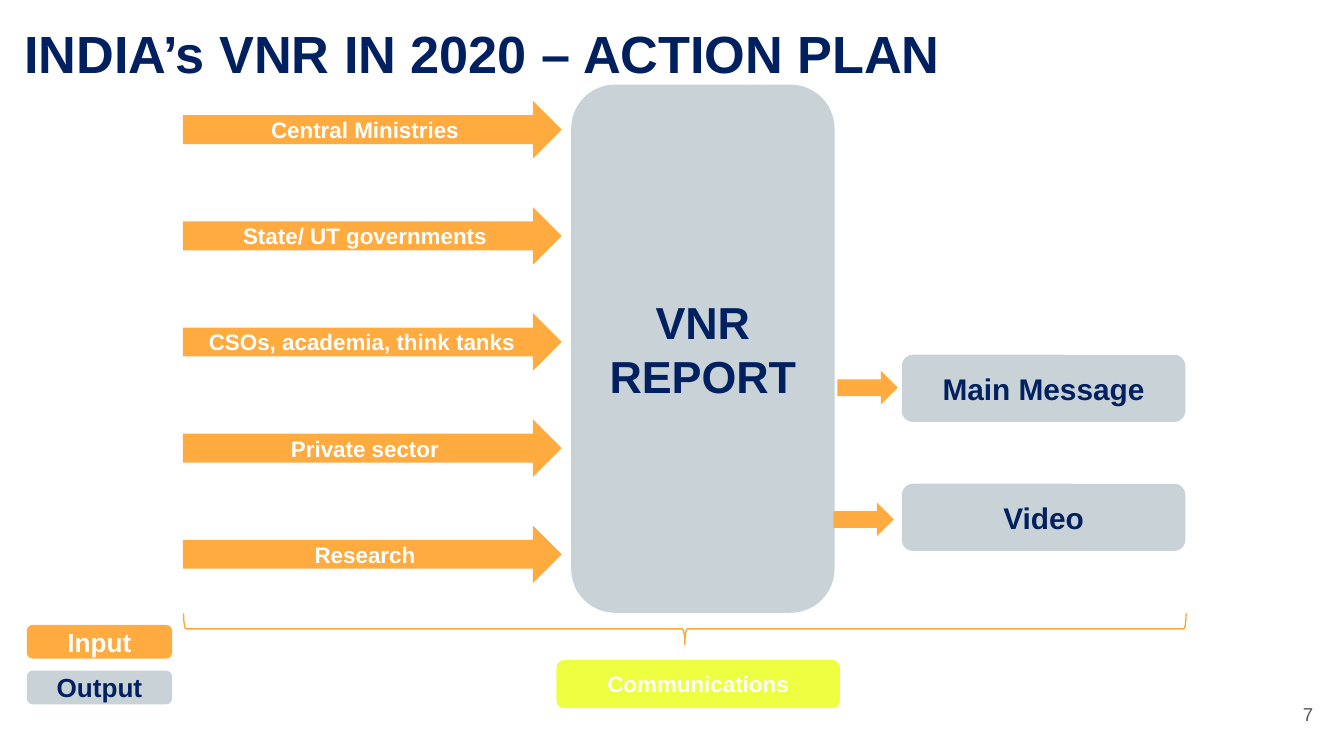
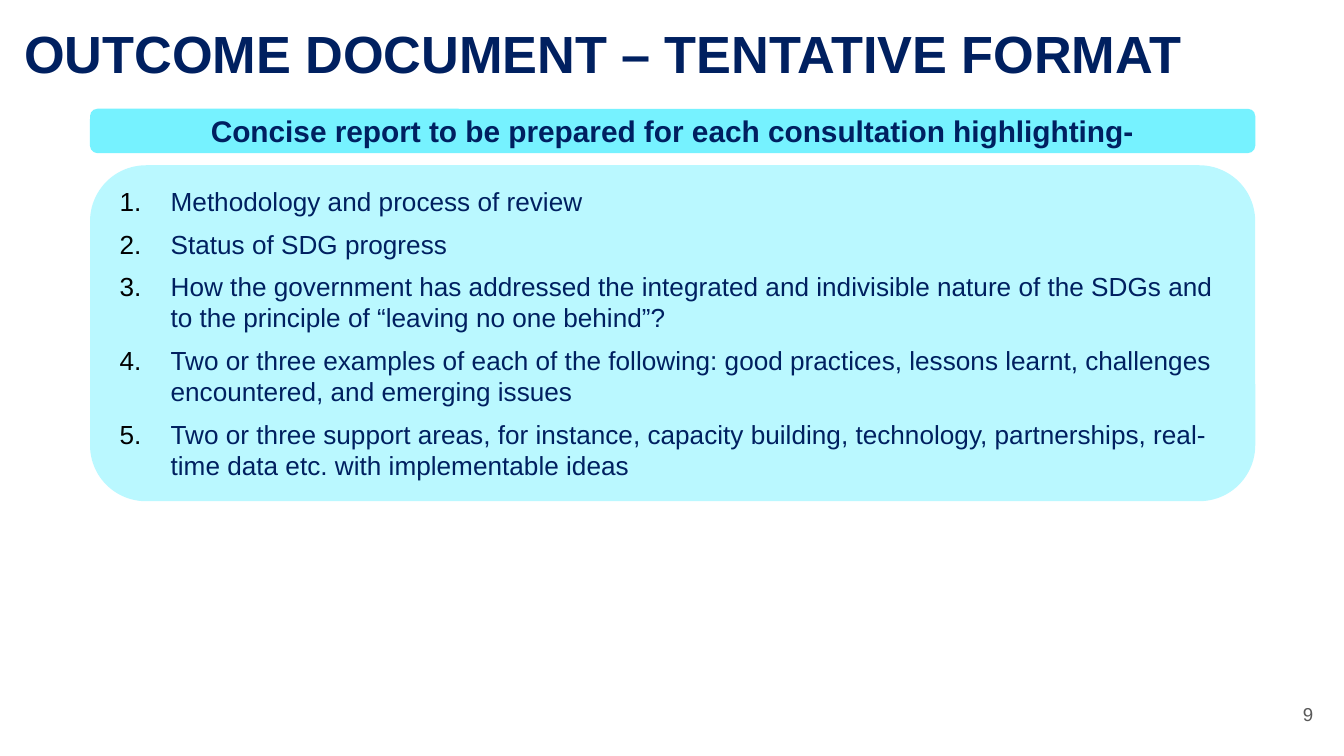
import pptx
import pptx.util
import pptx.dml.color
import pptx.enum.shapes
import pptx.enum.text
import pptx.oxml.ns
from lxml import etree

Inches, Pt = pptx.util.Inches, pptx.util.Pt
KIND = pptx.enum.shapes.MSO_SHAPE
ALIGN = pptx.enum.text.PP_ALIGN
ANCHOR = pptx.enum.text.MSO_ANCHOR
ROUND, ARROW = KIND.ROUNDED_RECTANGLE, KIND.RIGHT_ARROW

FONT = "Arial"
NAVY, WHITE, GREY, BLACK = "002060", "FFFFFF", "595959", "000000"
ORANGE, SILVER, LIME, BRACE = "FFAB40", "C9D3D7", "EEFF41", "FEA83A"
AQUA, PALE = "76F2FF", "BAF8FF"

PLAN = "INDIA’s VNR IN 2020 – ACTION PLAN"
INPUTS = ["Central Ministries", "State/ UT governments",
          "CSOs, academia, think tanks ", "Private sector", "Research"]
# label, top of box, left of arrow, top of arrow
OUTPUTS = [("Main Message", 2.64, 6.23, 2.76), ("Video", 3.6, 6.2, 3.74)]
LEGEND = [("Input", ORANGE, WHITE), ("Output", SILVER, NAVY)]

FORMAT = "OUTCOME DOCUMENT – TENTATIVE FORMAT"
LEAD = "Concise report to be prepared for each consultation highlighting-"
POINTS = [
    "Methodology and process of review",
    "Status of SDG progress",
    "How the government has addressed the integrated and indivisible nature "
    "of the SDGs and to the principle of “leaving no one behind”?",
    "Two or three examples of each of the following: good practices, lessons "
    "learnt, challenges encountered, and emerging issues",
    "Two or three support areas, for instance, capacity building, technology, "
    "partnerships, real-time data etc. with implementable ideas",
]


def rgb(code):
    return pptx.dml.color.RGBColor.from_string(code)


def write(frame, lines, size, color, bold=True, align=ALIGN.CENTER,
          anchor=ANCHOR.MIDDLE, after=0):
    """Fill a text frame with one paragraph per line, all in one style."""
    frame.text = "\n".join(lines)
    frame.word_wrap = True
    frame.auto_size = pptx.enum.text.MSO_AUTO_SIZE.NONE
    frame.vertical_anchor = anchor
    for para in frame.paragraphs:
        para.alignment = align
        para.space_after = Pt(after)
        for run in para.runs:
            font = run.font
            font.name, font.size, font.bold = FONT, Pt(size), bold
            font.color.rgb = rgb(color)


def pad(frame):
    frame.margin_left = frame.margin_right = Inches(0.1)
    frame.margin_top = frame.margin_bottom = Inches(0.1)


def add(slide, kind, box, fill=None):
    shape = slide.shapes.add_shape(kind, *map(Inches, box))
    shape.shadow.inherit = False
    if fill:
        shape.fill.solid()
        shape.fill.fore_color.rgb = rgb(fill)
    else:
        shape.fill.background()
    shape.line.fill.background()
    return shape


def label(slide, kind, box, fill, text, size, color, after=0):
    shape = add(slide, kind, box, fill)
    write(shape.text_frame, [text], size, color, after=after)


def number(para):
    """Give a paragraph a black automatic number and a hanging indent."""
    props = para._p.get_or_add_pPr()
    props.set("marL", str(Inches(0.38)))
    props.set("indent", str(-Inches(0.38)))
    name = pptx.oxml.ns.qn
    tint = etree.SubElement(props, name("a:buClr"))
    etree.SubElement(tint, name("a:srgbClr")).set("val", BLACK)
    etree.SubElement(props, name("a:buFont")).set("typeface", FONT)
    etree.SubElement(props, name("a:buAutoNum")).set("type", "arabicPeriod")


def start(deck, title, page):
    """Add a slide with its title and page number."""
    slide = deck.slides.add_slide(deck.slide_layouts[5])
    head = slide.shapes.title
    head.left, head.top, head.width, head.height = map(
        Inches, (0.08, 0.06, 9, 0.58))
    write(head.text_frame, [title], 28, NAVY, align=ALIGN.LEFT,
          anchor=ANCHOR.TOP)
    pad(head.text_frame)
    foot = slide.shapes.add_textbox(*map(Inches, (9.27, 5.1, 0.6, 0.43)))
    write(foot.text_frame, [str(page)], 10, GREY, False, ALIGN.RIGHT)
    pad(foot.text_frame)
    return slide


def plan(deck):
    slide = start(deck, PLAN, 7)
    for row, (text, fill, color) in enumerate(LEGEND):
        label(slide, ROUND, (0.2, 4.65 + 0.34 * row, 1.08, 0.25),
              fill, text, 14, color, after=6)
    label(slide, ROUND, (4.25, 0.63, 1.96, 3.93), SILVER, "VNR REPORT",
          24, NAVY, after=6)
    for row, text in enumerate(INPUTS):
        label(slide, ARROW, (1.36, 0.75 + 0.79 * row, 2.82, 0.43),
              ORANGE, text, 12, WHITE)
    for text, top, left, tip in OUTPUTS:
        label(slide, ROUND, (6.71, top, 2.11, 0.5), SILVER, text,
              16, NAVY, after=6)
        add(slide, ARROW, (left, tip, 0.45, 0.25), ORANGE)
    label(slide, ROUND, (4.14, 4.91, 2.11, 0.36), LIME, "Communications",
          12, WHITE, after=6)
    brace = add(slide, KIND.RIGHT_BRACE, (4.98, 0.95, 0.23, 7.46))
    brace.rotation = 90
    brace.line.color.rgb = rgb(BRACE)
    brace.line.width = Pt(0.75)


def outline(deck):
    slide = start(deck, FORMAT, 9)
    label(slide, ROUND, (0.67, 0.81, 8.67, 0.33), AQUA, LEAD, 16, NAVY)
    panel = add(slide, ROUND, (0.67, 1.23, 8.67, 2.5), PALE)
    write(panel.text_frame, POINTS, 14, NAVY, False, ALIGN.LEFT, after=6)
    for para in panel.text_frame.paragraphs:
        number(para)


def main():
    deck = pptx.Presentation()
    deck.slide_width = Inches(10)
    deck.slide_height = deck.slide_width * 9 // 16
    plan(deck)
    outline(deck)
    deck.save("out.pptx")


if __name__ == "__main__":
    main()
